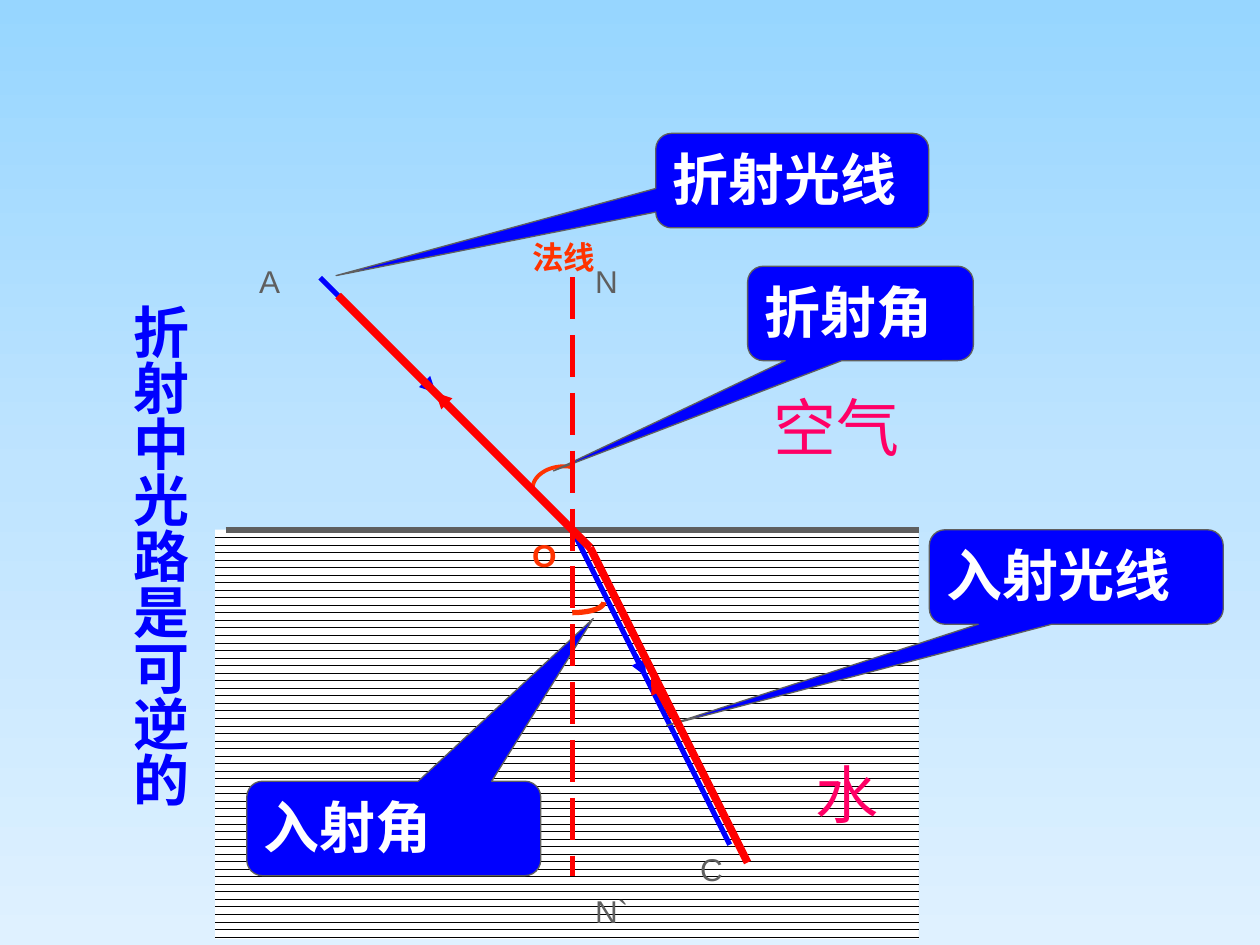
from copy import deepcopy

from lxml import etree
from pptx import Presentation
from pptx import util as u
from pptx.dml.color import RGBColor
from pptx.enum import dml, shapes, text
from pptx.oxml.ns import qn

# Grid: 240 columns by 180 rows, 24 cells to the inch
CELL = u.Inches(1) / 24
BLUE, RED, ORANGE, PINK, GREY = "0000FF", "FF0000", "FF3300", "FF0066", "5F5F5F"
LATIN, CJK = "Arial", "Noto Sans CJK SC"
AXIS, SURFACE = 109, 100.9      # column of the normal, row of the water surface
SHIFT = 3.4                     # offset of the reversed ray, in cells


def cells(*values):
    return [u.Emu(round(value * CELL)) for value in values]


def color(value):
    return RGBColor.from_string(value)


def style_line(line, ink, width):
    line.color.rgb = color(ink)
    line.width = u.Pt(width)


def add_line(slide, start, end, ink, width, dash=None, arrow=False):
    connector = slide.shapes.add_connector(
        shapes.MSO_CONNECTOR.STRAIGHT, *cells(*start, *end))
    style_line(connector.line, ink, width)
    if dash:
        connector.line.dash_style = dash
    if arrow:
        etree.SubElement(connector.line._get_or_add_ln(), qn("a:tailEnd"), type="triangle")
    etree.SubElement(connector._element.spPr, qn("a:effectLst"))


def write(shape, words, size, ink, font=LATIN, bold=False):
    frame = shape.text_frame
    frame.word_wrap = True
    frame.vertical_anchor = text.MSO_ANCHOR.TOP
    paragraph = frame.paragraphs[0]
    paragraph.alignment = text.PP_ALIGN.LEFT
    run = paragraph.add_run()
    run.text = words
    for name, value in dict(size=u.Pt(size), name=font, bold=bold).items():
        setattr(run.font, name, value)
    run.font.color.rgb = color(ink)
    etree.SubElement(run._r.get_or_add_rPr(), qn("a:ea"), typeface=CJK)


def add_label(slide, box, words, size=18, ink=GREY, font=LATIN, bold=False, vertical=False):
    label = slide.shapes.add_textbox(*cells(*box))
    write(label, words, size, ink, font, bold)
    if vertical:
        label.text_frame._txBody.bodyPr.set("vert", "eaVert")


def add_callout(slide, box, target, words):
    left, top, width, height = box
    callout = slide.shapes.add_shape(
        shapes.MSO_SHAPE.ROUNDED_RECTANGULAR_CALLOUT, *cells(*box))
    callout.shadow.inherit = False
    callout.adjustments[0] = (target[0] - left) / width - 0.5
    callout.adjustments[1] = (target[1] - top) / height - 0.5
    callout.adjustments[2] = 0.167
    callout.fill.solid()
    callout.fill.fore_color.rgb = color(BLUE)
    style_line(callout.line, GREY, 0.75)
    write(callout, words, 32, "FFFFFF", bold=True)


def add_angle_arc(slide, controls, width, steps=16):
    """Draw an open cubic curve through its four control points."""
    points = []
    for step in range(steps + 1):
        t = step / steps
        weights = ((1 - t) ** 3, 3 * t * (1 - t) ** 2, 3 * t * t * (1 - t), t ** 3)
        points.append(cells(*(sum(w * p[axis] for w, p in zip(weights, controls))
                              for axis in (0, 1))))
    builder = slide.shapes.build_freeform(*points[0])
    builder.add_line_segments(points[1:], close=False)
    arc = builder.convert_to_shape()
    arc.shadow.inherit = False
    arc.fill.background()
    style_line(arc.line, ORANGE, width)


def paint_background(slide):
    fill = slide.background.fill
    fill.gradient()
    fill.gradient_angle = 270
    stop_list = next(slide._element.iter(qn("a:gsLst")))
    stop_list.insert(1, deepcopy(stop_list[0]))
    stops = zip(fill.gradient_stops, (0, 0.5, 1), ("97D6FF", "BFE4FF", "DFF1FF"))
    for stop, position, ink in stops:
        stop.position = position
        stop.color.rgb = color(ink)


def add_water(slide, box):
    left, top, width, height = box
    water = slide.shapes.add_shape(shapes.MSO_SHAPE.RECTANGLE, *cells(*box))
    water.shadow.inherit = False
    water.fill.patterned()
    water.fill.pattern = dml.MSO_PATTERN.DASHED_HORIZONTAL
    water.fill.fore_color.rgb = color("000000")
    water.fill.back_color.rgb = color("FFFFFF")
    water.line.fill.background()
    add_line(slide, (left + 2, top), (left + width, top), GREY, 3.25)


def add_ray(slide, shift, ink, width, arrows):
    origin = (AXIS + shift, SURFACE + shift)
    for across, down in ((-48, -48), (30, 60)):
        add_line(slide, origin, (origin[0] + across, origin[1] + down), ink, width)
    for start, end in arrows:
        add_line(slide, start, end, ink, 3, arrow=True)


def build(slide):
    paint_background(slide)
    add_water(slide, (41, SURFACE, 134, 78))

    # Ray from air into water
    add_ray(slide, 0, BLUE, 3, [((81, 72.8), (83, 74.8)), ((121, 124.8), (123, 128.8))])

    # Angles and point names
    add_angle_arc(slide, [(AXIS, 89), (105, 88.2), (101.5, 90.5), (101.5, 92.9)], 2.25)
    add_angle_arc(slide, [(AXIS, 116.7), (112.3, 116.7), (115, 115.9), (115, 114.7)], 3)
    for left, top, width, name in ((47, 48.8, 12, "A"), (111, 48.8, 12, "N"),
                                   (111, 168.8, 20, "N`"), (131, 160.8, 14, "C")):
        add_label(slide, (left, top, width, 12), name)
    add_label(slide, (99, SURFACE, 14, 12), "O", ink=ORANGE, bold=True)

    # Media
    add_label(slide, (145, 72.8, 30, 16.8), "空气", 36, PINK, CJK)
    add_label(slide, (153, 142.8, 18, 16.8), "水", 36, PINK, CJK)

    # Callouts behind the reversed ray
    for box, target, words in (
            ((142.4, 50.7, 43, 18), (105.4, 89.7), "折射角"),
            ((47, 148.8, 56, 18), (113, 117.8), "入射角"),
            ((177, SURFACE, 56, 18), (127, 138.2), "入射光线")):
        add_callout(slide, box, target, words)

    # Normal
    add_line(slide, (AXIS, 52.8), (AXIS, 166.8), RED, 3, dash=dml.MSO_LINE.LONG_DASH)
    add_label(slide, (99, 44.2, 26, 12), "法线", ink=ORANGE, bold=True)

    # Reversed ray from water into air
    add_ray(slide, SHIFT, RED, 4.5, [((128, 136.6), (124, 129.2)), ((85, 76.8), (83, 74.8))])

    # Conclusion and the last callout
    add_label(slide, (20.2, 55.5, 17.8, 114), "折射中光路是可逆的", 32, BLUE,
              bold=True, vertical=True)
    add_callout(slide, (124.9, 25.4, 52, 18), (64, 52.5), "折射光线")


def main():
    presentation = Presentation()
    presentation.slide_width, presentation.slide_height = cells(240, 180)
    build(presentation.slides.add_slide(presentation.slide_layouts[6]))
    presentation.save("out.pptx")


if __name__ == "__main__":
    main()
